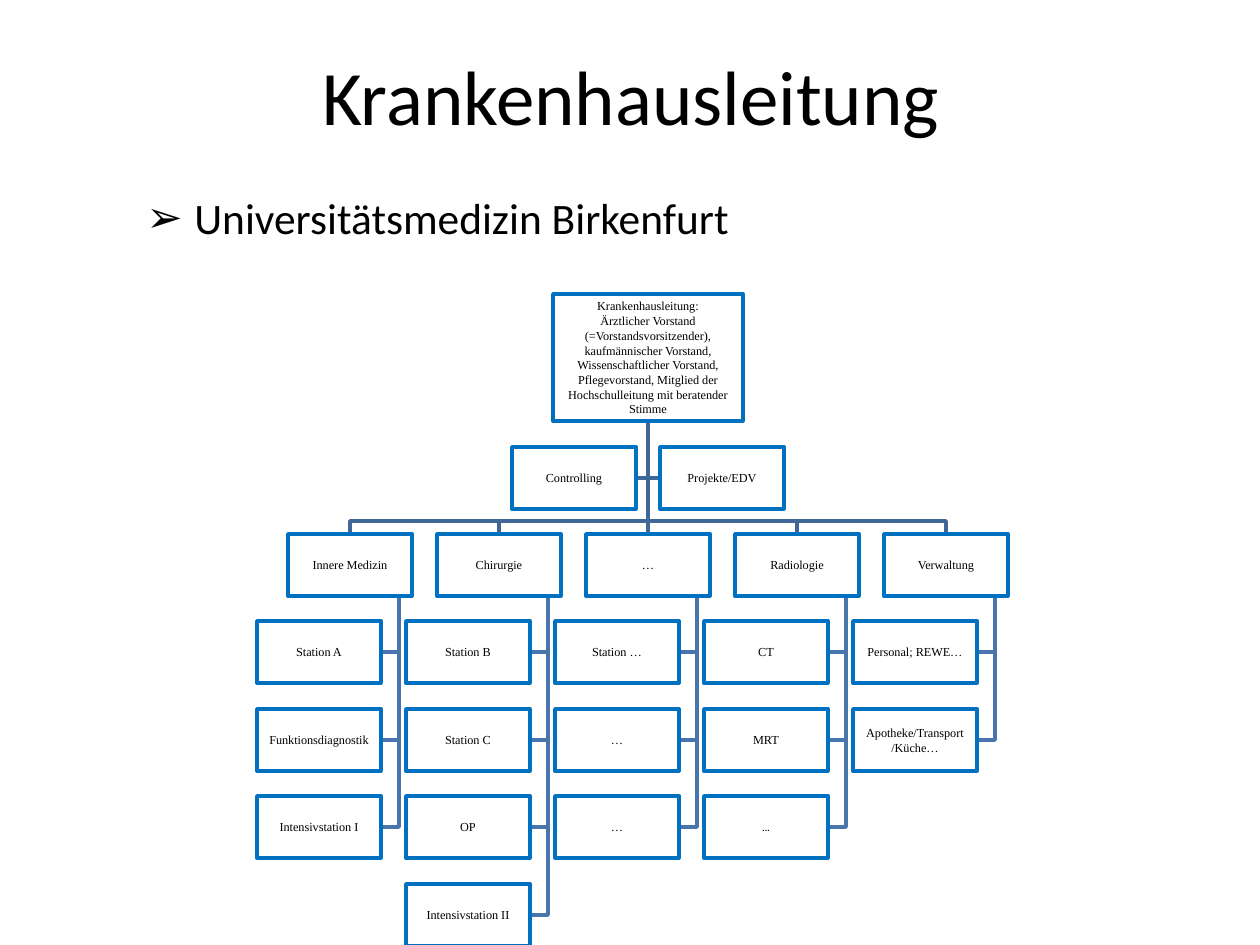
"""Builds the slide with the organisation chart of a hospital's management."""
from lxml.etree import SubElement as Sub
from pptx import Presentation
from pptx.dml.color import RGBColor
from pptx.enum.shapes import MSO_CONNECTOR as Conn, MSO_SHAPE as Shape
from pptx.enum.text import MSO_ANCHOR as Anchor, PP_ALIGN as Align
from pptx.oxml.ns import qn
from pptx.util import Pt

SCALE = 914400 / 126
BLACK = RGBColor(0x00, 0x00, 0x00)
WHITE = RGBColor(0xFF, 0xFF, 0xFF)
BLUE = RGBColor(0x00, 0x70, 0xC0)
DARK = RGBColor(0x3F, 0x67, 0x97)
STEEL = RGBColor(0x48, 0x75, 0xAC)

WIDE, HIGH = 124, 62
MID, BASE, BUS = 648, 421, 521
HEADS, STAFF = 534, 447
STEP, INSET, TRUNK = 149, 31, 111

BOSS = """Krankenhausleitung:
Ärztlicher Vorstand (=Vorstandsvorsitzender),
kaufmännischer Vorstand,
Wissenschaftlicher Vorstand, Pflegevorstand, Mitglied der Hochschulleitung mit beratender Stimme"""
UNITS = [
    ("Innere Medizin", ["Station A", "Funktionsdiagnostik", "Intensivstation I"]),
    ("Chirurgie", ["Station B", "Station C", "OP", "Intensivstation II"]),
    ("…", ["Station …", "…", "…"]),
    ("Radiologie", ["CT", "MRT", "…"]),
    ("Verwaltung", ["Personal; REWE…", "Apotheke/Transport\n/Küche…"]),
]

prs = Presentation()
prs.slide_width, prs.slide_height = [round(n * SCALE) for n in (1260, 945)]
shapes = prs.slides.add_slide(prs.slide_layouts[6]).shapes


def write(shape, text, size, font, align=Align.CENTER):
    frame = shape.text_frame
    frame.word_wrap = True
    frame.text = text
    for para in frame.paragraphs:
        para.alignment = align
        for run in para.runs:
            run.font.size = Pt(size)
            run.font.name = font
            run.font.color.rgb = BLACK
    return frame


def trace(color, *points):
    pen = shapes.build_freeform(*points[0], scale=SCALE)
    pen.add_line_segments(points[1:], close=False)
    wire = pen.convert_to_shape()
    wire.shadow.inherit = False
    wire.fill.background()
    wire.line.color.rgb = color
    wire.line.width = Pt(2)


title = shapes.add_textbox(*[round(n * SCALE) for n in (64, 0, 1134, 190)])
write(title, "Krankenhausleitung", 44, "Calibri").vertical_anchor = Anchor.MIDDLE

body = shapes.add_textbox(*[round(n * SCALE) for n in (134, 185, 1028, 56)])
para = write(body, "Universitätsmedizin Birkenfurt", 24.8, "Calibri", Align.LEFT).paragraphs[0]
para.space_before = Pt(5)
props = para._p.get_or_add_pPr()
indent = round(48 * SCALE)
props.set("marL", str(indent))
props.set("indent", str(-indent))
Sub(props, qn("a:buFont"), typeface="Calibri")
Sub(props, qn("a:buChar"), char="➢")

cards = [(BOSS, 553, 294, 190, 127)]
for name, left, edge in (("Controlling", 512, 636), ("Projekte/EDV", 660, 660)):
    hub = STAFF + HIGH // 2
    trace(DARK, (MID, BASE), (MID, hub), (edge, hub))
    cards.append((name, left, STAFF, WIDE, HIGH))

for col, (name, parts) in enumerate(UNITS):
    left = 288 + STEP * col
    cards.append((name, left, HEADS, WIDE, HIGH))
    top = left + WIDE // 2
    if top == MID:
        spine = shapes.add_connector(Conn.STRAIGHT, 0, 0, 0, 0)
        spine.line.color.rgb = DARK
        spine.line.width = Pt(2)
        Sub(spine._element.spPr, qn("a:effectLst"))
        middle = len(cards) - 1
    else:
        trace(DARK, (MID, BASE), (MID, BUS), (top, BUS), (top, HEADS))
    for row, part in enumerate(parts, 1):
        y = HEADS + 175 * row // 2
        x = left - INSET
        hub = y + HIGH // 2
        trace(STEEL, (left + TRUNK, HEADS + HIGH), (left + TRUNK, hub), (x + WIDE, hub))
        cards.append((part, x, y, WIDE, HIGH))

boxes = []
for text, *place in cards:
    box = shapes.add_shape(Shape.RECTANGLE, *[round(n * SCALE) for n in place])
    box.shadow.inherit = False
    box.fill.solid()
    box.fill.fore_color.rgb = WHITE
    box.line.color.rgb = BLUE
    box.line.width = Pt(2)
    frame = write(box, text, 7, "Times New Roman")
    frame.vertical_anchor = Anchor.MIDDLE
    frame.margin_left = frame.margin_right = frame.margin_top = frame.margin_bottom = 0
    boxes.append(box)

spine.begin_connect(boxes[0], 2)
spine.end_connect(boxes[middle], 0)
last = [box for box in boxes if box.text_frame.text == "…"][-1]
last.text_frame.paragraphs[0].runs[0].font.name = "Roboto"

prs.save("out.pptx")
